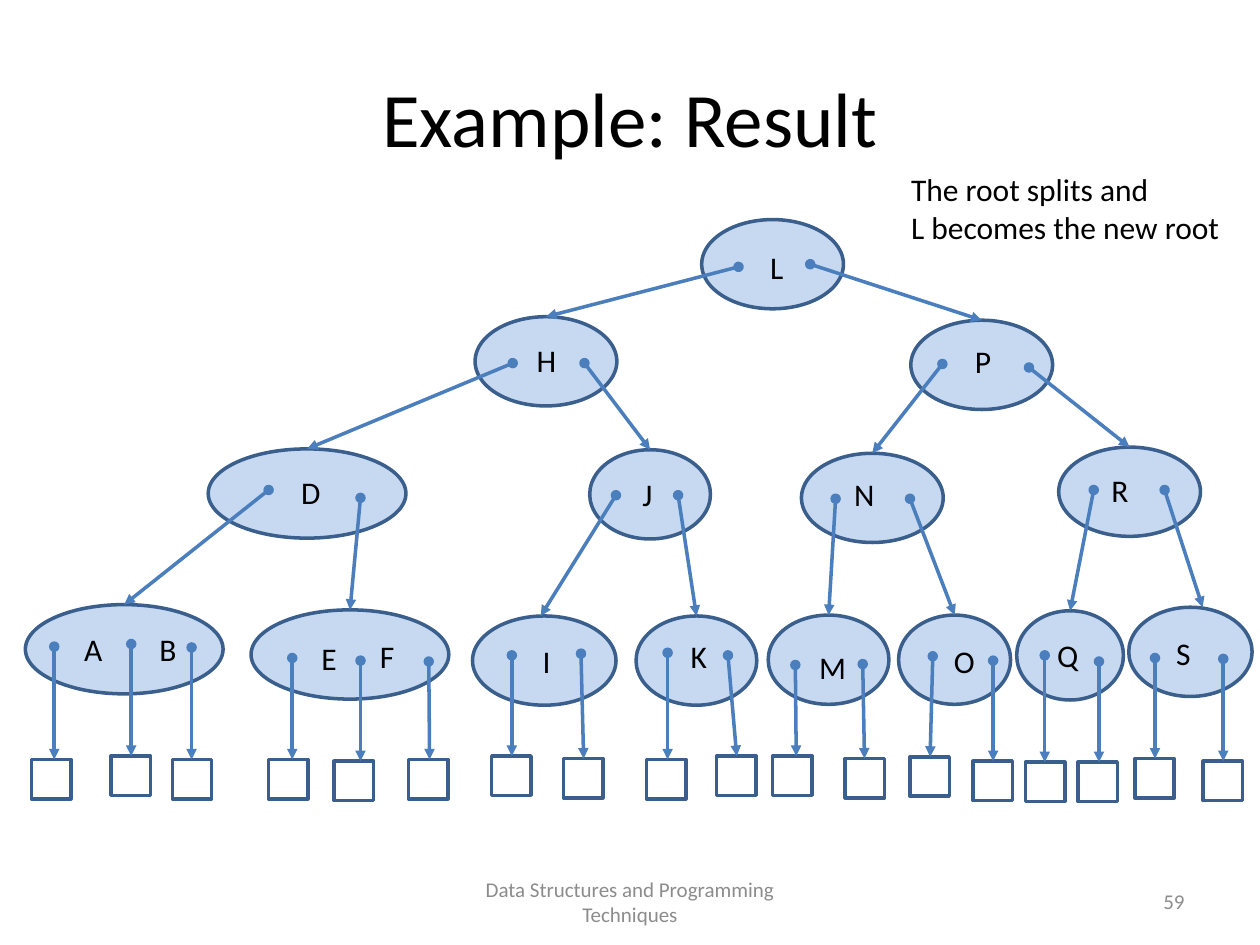
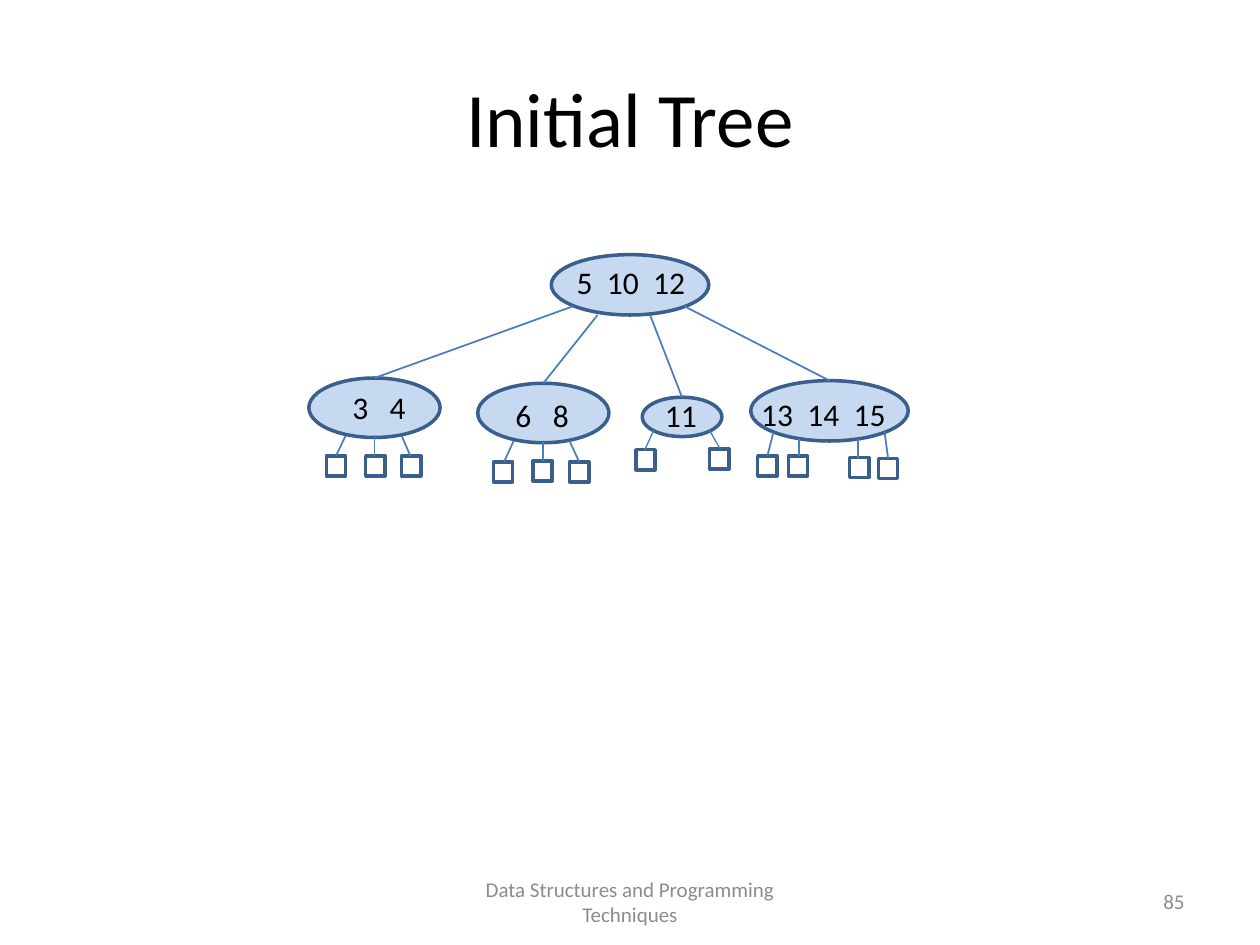
from dataclasses import dataclass

from lxml.etree import SubElement
from pptx import Presentation
from pptx.dml.color import RGBColor as Rgb
from pptx.enum.shapes import MSO_CONNECTOR as Link, MSO_SHAPE as Form
from pptx.enum.text import MSO_ANCHOR as Anchor, PP_ALIGN as Align
from pptx.oxml.ns import qn
from pptx.util import Pt


@dataclass(frozen=True)
class Theme:
    font: str = "Calibri"
    ink: str = "000000"
    grey: str = "8C8C8C"
    fill: str = "C6D9F1"
    edge: str = "3A5F8C"
    wire: str = "4B7EBC"
    title: int = 44
    body: int = 18
    foot: int = 12
    rim: int = 2


@dataclass(frozen=True)
class Node:
    area: tuple
    keys: tuple
    pin: tuple = ()
    leaves: tuple = ()
    shift: float = 0
    thin: float = 0


@dataclass(frozen=True)
class Tree:
    title: str
    page: str
    nodes: tuple
    box: tuple
    wire: float
    arrow: bool = False
    align: Align = Align.LEFT
    note: tuple = ()


THEME = Theme()
FOOTER = "Data Structures and Programming Techniques"
TALL, KEY = 51, 34

# Keys hold text, left, top, width; leaves hold wire start, box corner, drift.
RESULT = Tree(
    "Example: Result", "59",
    (
        Node((401, 125.5, 81, TALL), (("L", 433, 138, KEY),)),
        Node((271.5, 181, 81, TALL), (("H", 299.5, 191.5, KEY),), (422, 152.5)),
        Node((520.5, 183, 81, TALL), (("P", 550, 192, KEY),), (463, 151)),
        Node((119, 256.5, 113, TALL), (("D", 165, 267, KEY),), (293, 207.5)),
        Node((337, 257, 69, TALL), (("J", 360, 268, KEY),), (334, 207.5)),
        Node((458, 259, 81, TALL), (("N", 481, 268, KEY),), (538.5, 208)),
        Node((605, 255.5, 81, TALL), (("R", 628, 265.5, KEY),), (588, 210)),
        Node((14.5, 345.5, 113, TALL),
             (("A", 41, 356.5, KEY), ("B", 84, 356.5, KEY)), (153.5, 280),
             ((31, 369.5, 18, 434, 0), (75, 368, 63.5, 432, 0),
              (109.5, 370, 98.5, 434, 0))),
        Node((143.5, 348.5, 113, TALL),
             (("E", 176.5, 361.5, KEY), ("F", 210, 360.5, KEY)), (206, 284.5),
             ((167, 376, 153.5, 434, 0), (206, 377.5, 191, 435, 0),
              (245, 378, 233.5, 434, 0.5))),
        Node((270, 352, 82, TALL), (("I", 303, 363.5, KEY),), (352, 283),
             ((292.5, 374.5, 281, 432, 0), (332, 373.5, 322, 433.5, 1.5)), -2),
        Node((363.5, 352, 69, TALL), (("K", 387.5, 360.5, KEY),), (387.5, 283),
             ((381.5, 373, 369.5, 434, 0), (416, 374.5, 409.5, 432, 5))),
        Node((439, 351.5, 69, TALL), (("M", 461, 367, KEY),), (477.5, 285),
             ((454.5, 380, 441.5, 432, 0.5), (493, 379.5, 483, 433.5, 1))),
        Node((513.5, 351.5, 64, TALL), (("O", 538, 363.5, KEY),), (520, 285),
             ((533, 375, 520, 432.5, -1.5), (567.5, 377.5, 556, 435, 0))),
        Node((581, 349, 61, TALL), (("Q", 597, 360, KEY),), (625, 280),
             ((597, 374.5, 586, 435.5, 0), (628, 378, 616, 435.5, 0))),
        Node((645, 347, 70.5, TALL), (("S", 665, 359, KEY),), (665.5, 280),
             ((660, 376, 648.5, 433.5, 0), (699, 376.5, 687.5, 435, 0)), 7),
    ),
    box=(22.5, 22.5), wire=2, arrow=True,
    note=("The root splits and", "L becomes the new root"),
)

START = Tree(
    "Initial Tree", "85",
    (
        Node((315, 145.5, 90, 34.5), (("5 10 12", 318, 147, 85),)),
        Node((176.5, 216, 75, 34), (("3 4", 181.5, 218, 70),), (327.5, 175),
             ((197.5, 249, 186.5, 260.5, -5.5), (214, 250, 209, 260.5, 0),
              (229.5, 249, 229.5, 260.5, 5))),
        Node((273, 219, 75, 34), (("6 8", 278.5, 222.5, 62.5),), (341.5, 180),
             ((293.5, 252, 282, 264, -5.5), (310.5, 252.5, 304.5, 263.5, 0),
              (325.5, 252, 325.5, 264, 5.5))),
        Node((367, 227, 45.5, 22.5), (("11", 371.5, 222.5, 35),), (371.5, 180),
             ((373.5, 246, 363.5, 257, -5), (405.5, 246, 405.5, 256.5, 6)),
             thin=0.75),
        Node((429, 217.5, 90, 34.5), (("13 14 15", 422.5, 222, 96),), (391, 175),
             ((442, 247, 433, 260.5, -3.5), (456.5, 251, 450.5, 260.5, 0),
              (490.5, 251, 485.5, 261.5, 0), (505.5, 247, 502, 262, 2))),
    ),
    box=(11, 11.5), wire=1, align=Align.CENTER,
)


def tint(code):
    return Rgb.from_string(code)


def write(slide, area, lines, size, color, align=Align.LEFT, anchor=Anchor.TOP):
    frame = slide.shapes.add_textbox(*map(Pt, area)).text_frame
    frame.word_wrap = True
    frame.vertical_anchor = anchor
    for num, line in enumerate(lines):
        para = frame.paragraphs[0] if num == 0 else frame.add_paragraph()
        para.alignment = align
        para.font.name, para.font.size = THEME.font, Pt(size)
        para.font.color.rgb = tint(color)
        para.add_run().text = line
    return frame


def label(slide, key, align):
    text, left, top, width = key
    frame = write(slide, (left, top, width, 29), [""], THEME.body, THEME.ink, align)
    para = frame.paragraphs[0]
    parts = text.split()
    gap = "810" if len(parts) == 2 else "410"
    para.runs[0].text = parts[0]
    for part in parts[1:]:
        space = para.add_run()
        space.text = " "
        space._r.get_or_add_rPr().set("spc", gap)
        para.add_run().text = part


def draw(slide, form, area, fill=None):
    shape = slide.shapes.add_shape(form, *map(Pt, area))
    shape.shadow.inherit = False
    if fill:
        shape.fill.solid()
        shape.fill.fore_color.rgb = tint(fill)
    else:
        shape.fill.background()
    shape.line.color.rgb = tint(THEME.edge)
    shape.line.width = Pt(THEME.rim)


def join(slide, start, end, width, arrow):
    wire = slide.shapes.add_connector(Link.STRAIGHT, *map(Pt, (*start, *end)))
    wire.line.color.rgb = tint(THEME.wire)
    wire.line.width = Pt(width)
    props = wire._element.spPr
    if arrow:
        line = props.find(qn("a:ln"))
        SubElement(line, qn("a:headEnd"), type="oval")
        SubElement(line, qn("a:tailEnd"), type="triangle")
    SubElement(props, qn("a:effectLst"))


def frame_up(slide, tree):
    mid = Anchor.MIDDLE
    write(slide, (36, 21.5, 648, 90), [tree.title], THEME.title, THEME.ink,
          Align.CENTER, mid)
    write(slide, (246, 500.5, 228, 29), [FOOTER], THEME.foot, THEME.grey,
          Align.CENTER, mid)
    write(slide, (516, 500.5, 168, 29), [tree.page], THEME.foot, THEME.grey,
          Align.RIGHT, mid)


def grow(slide, tree):
    for node in tree.nodes:
        draw(slide, Form.OVAL, node.area, THEME.fill)
    for node in tree.nodes:
        left, top, width, _ = node.area
        if node.pin:
            end = left + width / 2 + node.shift, top
            join(slide, node.pin, end, tree.wire, tree.arrow)
        for x, y, side, base, drift in node.leaves:
            draw(slide, Form.RECTANGLE, (side, base, *tree.box))
            join(slide, (x, y), (x + drift, base), node.thin or tree.wire,
                 tree.arrow)
        for key in node.keys:
            label(slide, key, tree.align)
    if tree.note:
        write(slide, (513.5, 93.5, 197.5, 51), tree.note, THEME.body, THEME.ink)


def main():
    deck = Presentation()
    deck.slide_width, deck.slide_height = Pt(720), Pt(540)
    for tree in (RESULT, START):
        slide = deck.slides.add_slide(deck.slide_layouts[6])
        frame_up(slide, tree)
        grow(slide, tree)
    deck.save("out.pptx")


if __name__ == "__main__":
    main()
